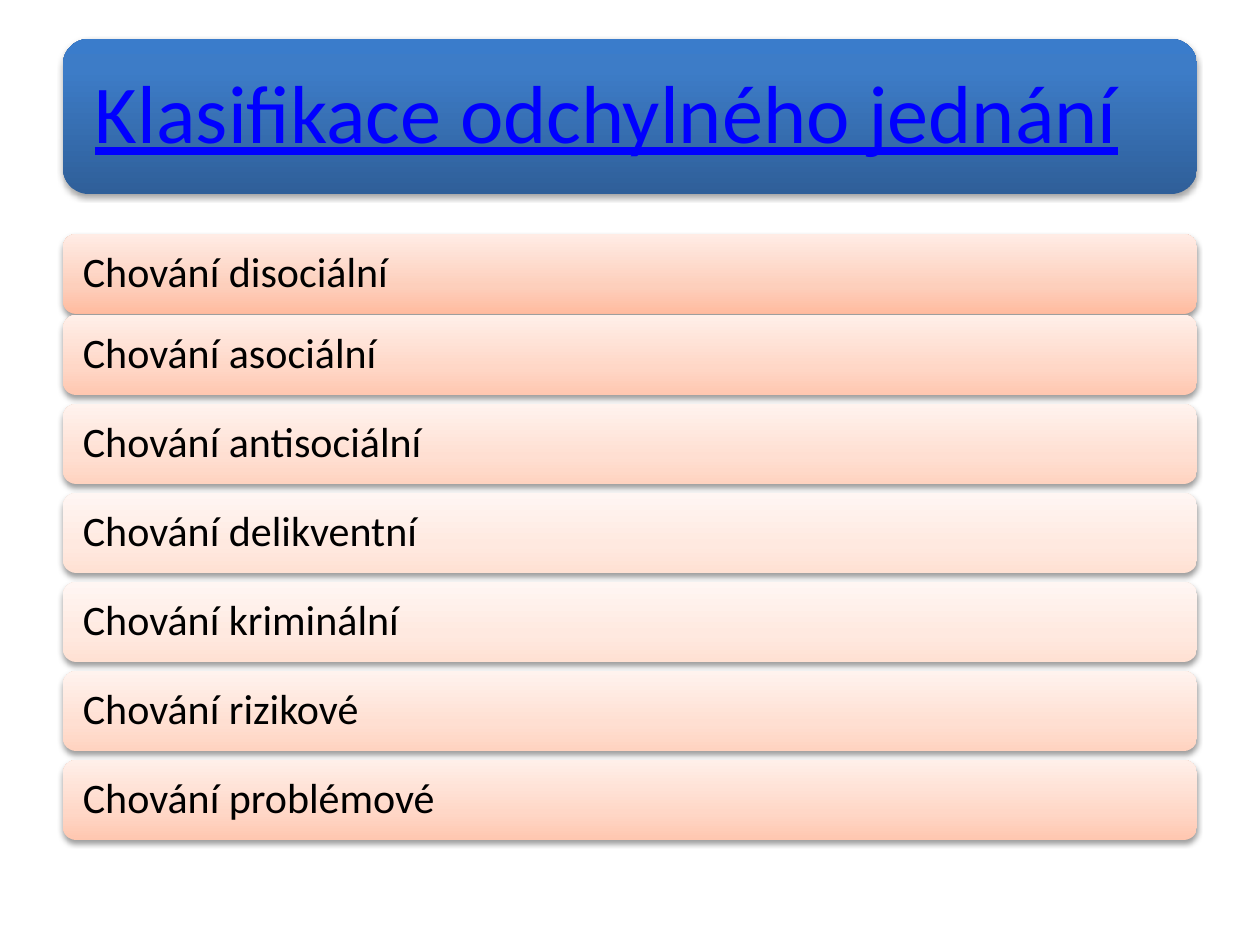
from dataclasses import dataclass

from lxml import etree
from pptx import Presentation
from pptx.dml.color import RGBColor
from pptx.enum.shapes import MSO_SHAPE
from pptx.enum.text import MSO_ANCHOR, MSO_AUTO_SIZE, PP_ALIGN
from pptx.oxml import parse_xml
from pptx.oxml.ns import nsdecls, qn
from pptx.util import Emu, Pt

ROUNDED = MSO_SHAPE.ROUNDED_RECTANGLE
MIDDLE = MSO_ANCHOR.MIDDLE
LEFT = PP_ALIGN.LEFT
NO_AUTOFIT = MSO_AUTO_SIZE.NONE
TITLE_ONLY = 5
EMU_PER_PX = 914400 / 126


@dataclass(frozen=True)
class Theme:
    font: str = "Calibri"
    title_size: int = 47
    row_size: int = 24
    title_color: str = "0000FF"
    row_color: str = "000000"
    line_spacing: float = 0.9
    title_fill: tuple = ((0, "2F5F99"), (80, "3D7CC7"), (100, "3A7CCB"))
    strong: tuple = ((0, "FFBB9F"), (35, "FDCFBC"), (100, "FFECE5"))
    medium: tuple = ((0, "FFC7B0"), (35, "FFD7C7"), (100, "FFEFE9"))
    light: tuple = ((0, "FFD3C0"), (35, "FFDFD2"), (100, "FFF3EE"))
    pale: tuple = ((0, "FFE1D3"), (35, "FFE9E0"), (100, "FFF6F3"))


def px(length):
    return Emu(round(length * EMU_PER_PX))


def write_text(frame, text, *, font, size, color, spacing, inset, underline=False):
    frame.word_wrap = True
    frame.auto_size = NO_AUTOFIT
    frame.vertical_anchor = MIDDLE
    frame.margin_left = frame.margin_right = px(inset)
    frame.margin_top = frame.margin_bottom = px(inset // 2)
    para = frame.paragraphs[0]
    para.alignment = LEFT
    para.line_spacing = spacing
    span = para.add_run()
    span.text = text
    span.font.name = font
    span.font.size = Pt(size)
    span.font.underline = underline
    span.font.color.rgb = RGBColor.from_string(color)


class SlideBuilder:
    """Draws the elements of one slide in a shared style."""

    def __init__(self, page, theme):
        self.page = page
        self.theme = theme

    def card(self, left, top, width, height, stops, shadow_alpha, shadow_distance):
        card = self.page.shapes.add_shape(
            ROUNDED, px(left), px(top), px(width), px(height))
        properties = card.element.spPr
        gradient = parse_xml(
            f'<a:gradFill {nsdecls("a")} rotWithShape="1"><a:gsLst/>'
            '<a:lin ang="16200000" scaled="0"/></a:gradFill>')
        for position, color in stops:
            stop = etree.SubElement(gradient[0], qn("a:gs"), pos=str(position * 1000))
            etree.SubElement(stop, qn("a:srgbClr"), val=color)
        properties.append(gradient)
        card.line.fill.background()
        card.shadow.inherit = False
        properties.find(qn("a:effectLst")).append(parse_xml(
            f'<a:outerShdw {nsdecls("a")} blurRad="{Pt(3.1)}" '
            f'dist="{Pt(shadow_distance)}" dir="5400000" rotWithShape="0">'
            f'<a:srgbClr val="000000"><a:alpha val="{shadow_alpha * 1000}"/>'
            '</a:srgbClr></a:outerShdw>'))
        return card

    def title(self, text, left, top, width, height):
        theme = self.theme
        card = self.card(left, top, width, height, theme.title_fill, 35, 1.8)
        title = self.page.shapes.title
        title.element.addprevious(card.element)
        title.left, title.top = px(left), px(top)
        title.width, title.height = px(width), px(height)
        write_text(title.text_frame, text, font=theme.font, size=theme.title_size,
                   color=theme.title_color, spacing=theme.line_spacing,
                   inset=32, underline=True)

    def row(self, text, left, top, width, height, stops):
        theme = self.theme
        card = self.card(left, top, width, height, stops, 38, 1.6)
        write_text(card.text_frame, text, font=theme.font, size=theme.row_size,
                   color=theme.row_color, spacing=theme.line_spacing, inset=16)


def main():
    theme = Theme()
    deck = Presentation()
    deck.slide_width, deck.slide_height = px(1260), px(945)
    page = deck.slides.add_slide(deck.slide_layouts[TITLE_ONLY])
    builder = SlideBuilder(page, theme)

    left, width = 63, 1134
    builder.title("Klasifikace odchylného jednání", left, 39, width, 155)

    first_top, second_top, pitch, height = 234, 315, 89, 80
    builder.row("Chování disociální", left, first_top, width, height, theme.strong)
    rows = (
        ("asociální", theme.medium),
        ("antisociální", theme.light),
        ("delikventní", theme.pale),
        ("kriminální", theme.pale),
        ("rizikové", theme.light),
        ("problémové", theme.medium),
    )
    for index, (kind, stops) in enumerate(rows):
        builder.row(f"Chování {kind}", left, second_top + index * pitch,
                    width, height, stops)

    deck.save("out.pptx")


if __name__ == "__main__":
    main()
